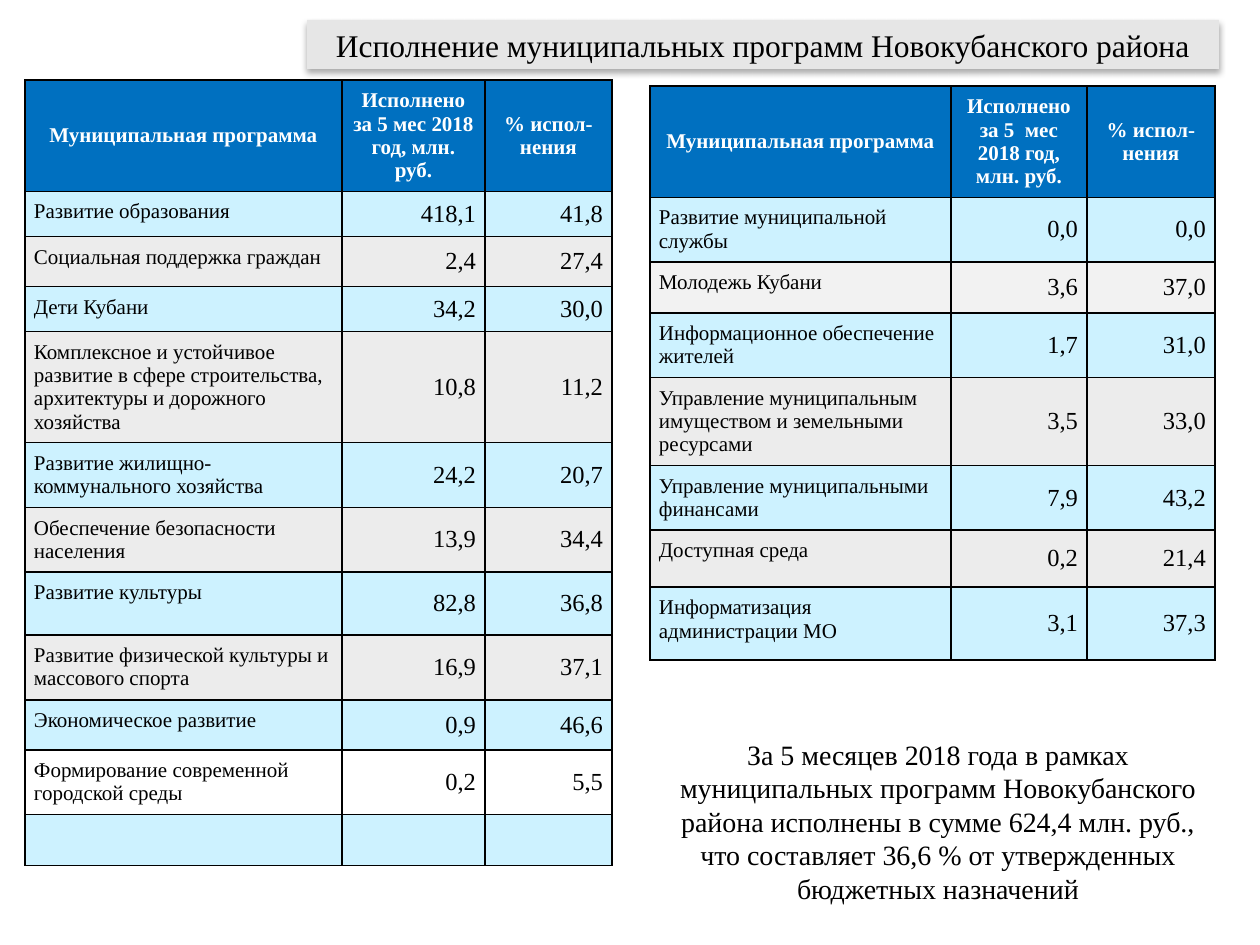
from typing import NamedTuple

from lxml import etree
from pptx import Presentation
from pptx import util as u
from pptx.dml.color import RGBColor
from pptx.enum import text
from pptx.oxml.ns import qn

EMU_PER_PX = u.Inches(1) / 126
FONT = "Times New Roman"
BLACK, WHITE = "000000", "FFFFFF"
HEADER_BLUE, ROW_BLUE, ROW_GREY, ROW_PALE = "0070C0", "CDF2FF", "ECECEC", "F2F2F2"
LEFT, CENTER, RIGHT = (text.PP_ALIGN.LEFT, text.PP_ALIGN.CENTER, text.PP_ALIGN.RIGHT)
TOP, MIDDLE = text.MSO_ANCHOR.TOP, text.MSO_ANCHOR.MIDDLE


class Row(NamedTuple):
    height: int
    program: str
    amount: str
    percent: str
    fill: str


class ProgramTable(NamedTuple):
    left: int
    top: int
    widths: list[int]
    rows: list[Row]


MAIN_PROGRAMS = ProgramTable(25, 80, [317, 143, 127], [
    Row(110, "Муниципальная программа", "Исполнено за 5 мес 2018 год, млн. руб.",
        "% испол-нения", HEADER_BLUE),
    Row(44, "Развитие образования", "418,1", "41,8", ROW_BLUE),
    Row(50, "Социальная поддержка граждан", "2,4", "27,4", ROW_GREY),
    Row(44, "Дети Кубани", "34,2", "30,0", ROW_BLUE),
    Row(110, "Комплексное и устойчивое развитие в сфере строительства, "
        "архитектуры и дорожного хозяйства", "10,8", "11,2", ROW_GREY),
    Row(64, "Развитие жилищно-коммунального хозяйства", "24,2", "20,7", ROW_BLUE),
    Row(64, "Обеспечение безопасности населения", "13,9", "34,4", ROW_GREY),
    Row(63, "Развитие культуры", "82,8", "36,8", ROW_BLUE),
    Row(65, "Развитие физической культуры и массового спорта", "16,9", "37,1", ROW_GREY),
    Row(50, "Экономическое развитие", "0,9", "46,6", ROW_BLUE),
    Row(64, "Формирование современной городской среды", "0,2", "5,5", WHITE),
    Row(51, "", "", "", ROW_BLUE),
])
OTHER_PROGRAMS = ProgramTable(650, 86, [301, 136, 128], [
    Row(109, "Муниципальная программа", "Исполнено за 5  мес 2018 год, млн. руб.",
        "% испол-нения", HEADER_BLUE),
    Row(64, "Развитие муниципальной службы", "0,0", "0,0", ROW_BLUE),
    Row(51, "Молодежь Кубани", "3,6", "37,0", ROW_PALE),
    Row(63, "Информационное обеспечение жителей", "1,7", "31,0", ROW_BLUE),
    Row(87, "Управление муниципальным имуществом и земельными ресурсами",
        "3,5", "33,0", ROW_GREY),
    Row(63, "Управление муниципальными финансами", "7,9", "43,2", ROW_BLUE),
    Row(57, "Доступная среда", "0,2", "21,4", ROW_GREY),
    Row(73, "Информатизация администрации МО", "3,1", "37,3", ROW_BLUE),
])


def px(length: int) -> u.Emu:
    return u.Emu(round(length * EMU_PER_PX))


def color(value: str) -> RGBColor:
    return RGBColor.from_string(value)


def write(frame, words: str, size: int, align, ink: str = BLACK, bold: bool = False) -> None:
    para = frame.paragraphs[0]
    para.alignment = align
    span = para.add_run()
    span.text = words
    span.font.name = FONT
    span.font.size = u.Pt(size)
    span.font.bold = bold
    span.font.color.rgb = color(ink)


def add_solid(parent, value: str):
    fill = etree.SubElement(parent, qn("a:solidFill"))
    return etree.SubElement(fill, qn("a:srgbClr"), val=value)


def add_borders(cell) -> None:
    properties = cell._tc.get_or_add_tcPr()
    for side in ("a:lnL", "a:lnR", "a:lnT", "a:lnB"):
        line = etree.SubElement(properties, qn(side), w=str(u.Pt(1)))
        add_solid(line, BLACK)


def add_title_shadow(shape) -> None:
    effects = etree.SubElement(shape._element.spPr, qn("a:effectLst"))
    shadow = etree.SubElement(
        effects, qn("a:outerShdw"), blurRad=str(u.Pt(3.5)), dist=str(u.Pt(2.2)),
        dir=str(90 * 60000), rotWithShape="0")
    ink = etree.SubElement(shadow, qn("a:srgbClr"), val=BLACK)
    etree.SubElement(ink, qn("a:alpha"), val="32000")


def place(shape, left: int, top: int, width: int, height: int) -> None:
    shape.left, shape.top = px(left), px(top)
    shape.width, shape.height = px(width), px(height)


def add_title(page, words: str) -> None:
    title = page.shapes.title
    place(title, 307, 20, 912, 49)
    title.fill.solid()
    title.fill.fore_color.rgb = color("E6E6E6")
    add_title_shadow(title)
    title.text_frame.vertical_anchor = MIDDLE
    write(title.text_frame, words, 18, CENTER)


def add_program_table(page, spec_table: ProgramTable) -> None:
    rows, widths = spec_table.rows, spec_table.widths
    table = page.shapes.add_table(
        len(rows), len(widths), px(spec_table.left), px(spec_table.top),
        px(sum(widths)), px(sum(row.height for row in rows))).table
    for column, width in zip(table.columns, widths):
        column.width = px(width)
    for row_index, row in enumerate(rows):
        table.rows[row_index].height = px(row.height)
        is_header = row_index == 0
        for column_index, words in enumerate((row.program, row.amount, row.percent)):
            cell = table.cell(row_index, column_index)
            add_borders(cell)
            cell.fill.solid()
            cell.fill.fore_color.rgb = color(row.fill)
            if not words:
                continue
            cell.margin_left = cell.margin_right = px(9)
            cell.margin_top = cell.margin_bottom = px(9)
            is_name = column_index == 0
            cell.vertical_anchor = TOP if is_name and not is_header else MIDDLE
            if is_header:
                write(cell.text_frame, words, 12, CENTER, WHITE, bold=True)
            elif is_name:
                write(cell.text_frame, words, 12, LEFT)
            else:
                write(cell.text_frame, words, 14, RIGHT)


def add_summary(page, words: str) -> None:
    box = page.shapes.add_textbox(px(650), px(731), px(576), px(183))
    box.text_frame.word_wrap = True
    box.text_frame.auto_size = text.MSO_AUTO_SIZE.SHAPE_TO_FIT_TEXT
    write(box.text_frame, words, 16, CENTER)


def main() -> None:
    deck = Presentation()
    deck.slide_width, deck.slide_height = u.Inches(10), u.Inches(7.5)
    page = deck.slides.add_slide(deck.slide_layouts.get_by_name("Title Only"))
    add_title(page, "Исполнение муниципальных программ Новокубанского района")
    for programs in (OTHER_PROGRAMS, MAIN_PROGRAMS):
        add_program_table(page, programs)
    add_summary(page, "За 5 месяцев 2018 года в рамках муниципальных программ "
                "Новокубанского района исполнены в сумме 624,4 млн. руб., "
                "что составляет 36,6 % от утвержденных бюджетных назначений")
    deck.save("out.pptx")


if __name__ == "__main__":
    main()
